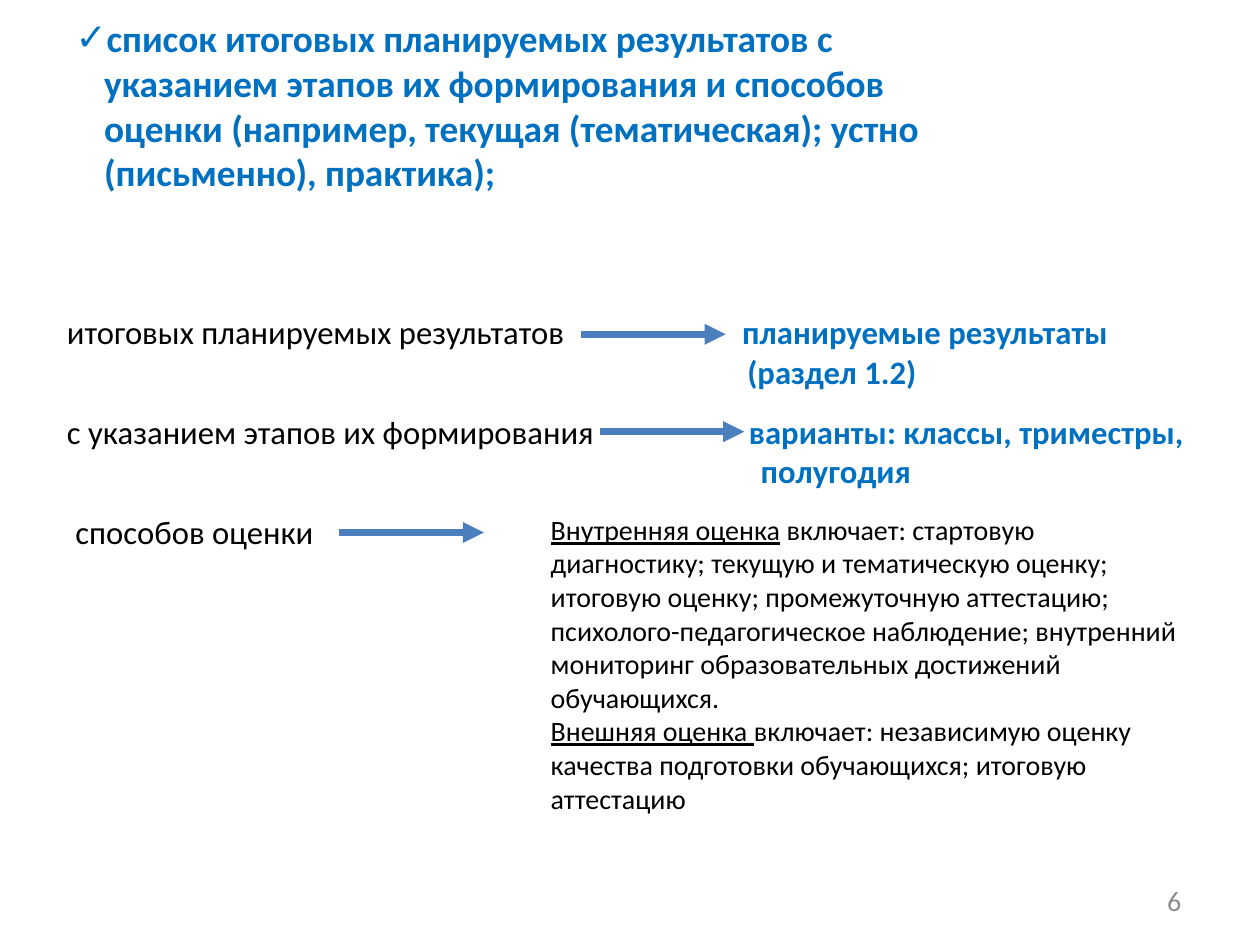
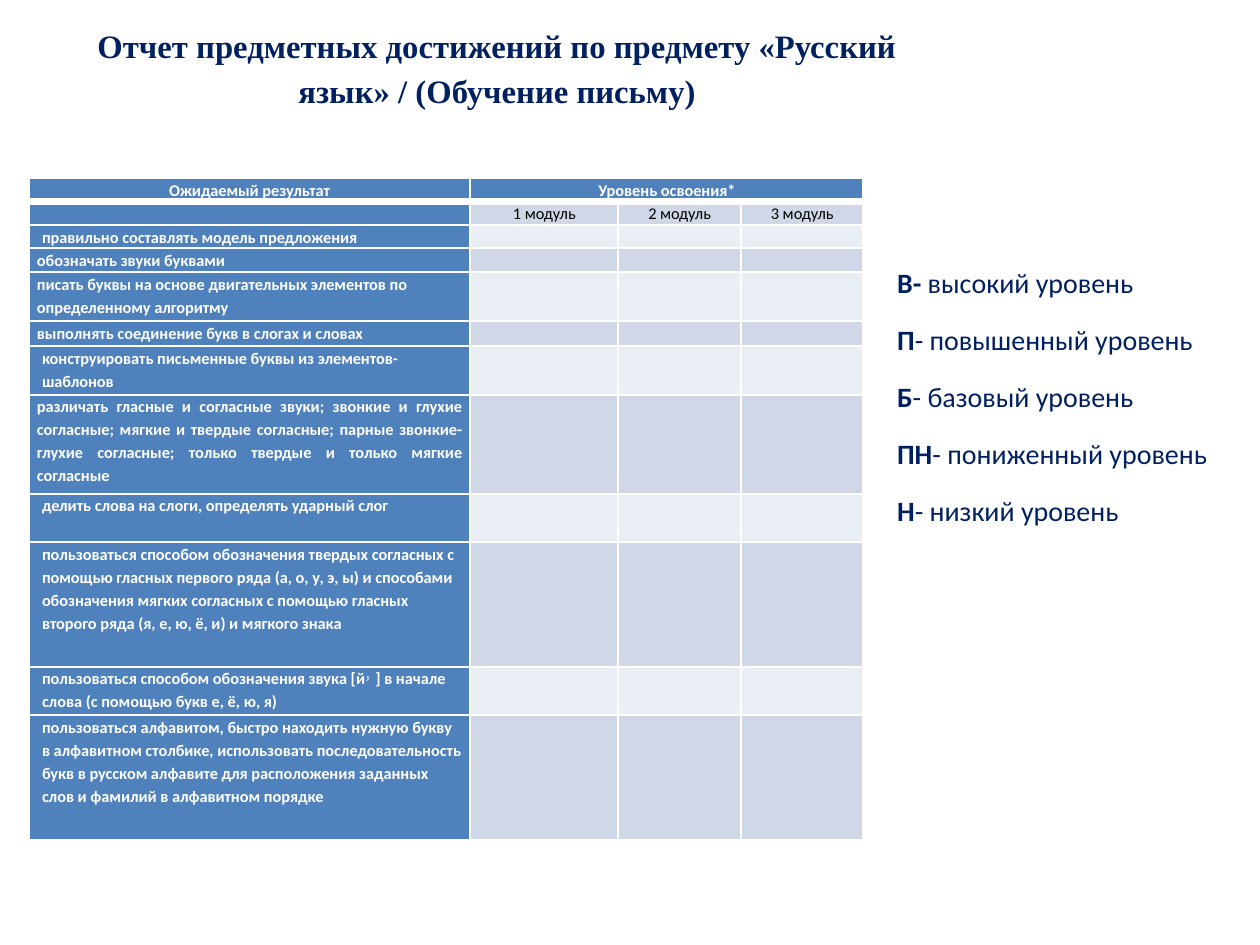
"""Build two slides on planned learning results and their assessment."""
from lxml import etree
from pptx import Presentation
from pptx import util as u
from pptx.dml.color import RGBColor
from pptx.enum import shapes, text
from pptx.oxml.ns import qn

BLUE, NAVY, BLACK, WHITE, GREY = "0070C0", "002060", "000000", "FFFFFF", "8C8C8C"
ARROW, HEADER, BAND_DARK, BAND_LIGHT = "4B7EBC", "4F81BD", "D0D8E8", "E9EDF4"
LEFT, CENTER, RIGHT, JUSTIFY = (text.PP_ALIGN.LEFT, text.PP_ALIGN.CENTER,
                                text.PP_ALIGN.RIGHT, text.PP_ALIGN.JUSTIFY)
ANSWER = {"color": BLUE, "bold": True}
UNDERLINED = {"underline": True}
BOLD = {"bold": True}
INDENTED = {"margin": 0.03}

STAGES = [
    (1.81, [["итоговых планируемых результатов\t", ("планируемые результаты", ANSWER)],
            [("\t(раздел 1.2)", ANSWER)]], [4.02, 4.05]),
    (2.4, [["с указанием этапов их формирования\t", ("варианты: классы, триместры,", ANSWER)],
           [("\tполугодия", ANSWER)]], [4.06, 4.13]),
]
ARROWS = [(3.46, 1.99), (2.02, 3.17), (3.57, 2.57)]
ASSESSMENT = [
    [("Внутренняя оценка", UNDERLINED),
     " включает: стартовую диагностику; текущую и тематическую оценку; итоговую оценку; "
     "промежуточную аттестацию; психолого-педагогическое наблюдение; внутренний мониторинг "
     "образовательных достижений обучающихся."],
    [("Внешняя оценка ", UNDERLINED),
     "включает: независимую оценку качества подготовки обучающихся; итоговую аттестацию"],
]
LEVELS = [("В-", " высокий уровень"), ("П", "- повышенный уровень"),
          ("Б", "- базовый уровень"), ("ПН", "- пониженный уровень"),
          ("Н", "- низкий уровень")]
RESULTS = [
    (0.14, "правильно составлять модель предложения", INDENTED),
    (0.14, "обозначать звуки буквами", {}),
    (0.29, "писать буквы на основе двигательных элементов по определенному алгоритму", {}),
    (0.15, "выполнять соединение букв в слогах и словах", {}),
    (0.29, "конструировать письменные буквы из элементов-шаблонов", INDENTED),
    (0.59, "различать гласные и согласные звуки; звонкие и глухие согласные; мягкие и твердые "
           "согласные; парные звонкие-глухие согласные; только твердые и только мягкие согласные ",
     {"align": JUSTIFY}),
    (0.29, "делить слова на слоги, определять ударный слог", INDENTED),
    (0.74, "пользоваться способом обозначения твердых согласных с помощью гласных первого ряда "
           "(а, о, у, э, ы) и способами обозначения мягких согласных с помощью гласных второго "
           "ряда (я, е, ю, ё, и) и мягкого знака", INDENTED),
    (0.29, "пользоваться способом обозначения звука [йۥ ] в начале слова "
           "(с помощью букв е, ё, ю, я)", INDENTED),
    (0.74, "пользоваться алфавитом, быстро находить нужную букву в алфавитном столбике, "
           "использовать последовательность букв в русском алфавите для расположения заданных "
           "слов и фамилий в алфавитном порядке", INDENTED),
]


def rgb(code):
    """Turn a hex string into a colour."""
    return RGBColor.from_string(code)


def child(parent, tag, **attributes):
    """Append a drawing element with attributes."""
    return etree.SubElement(parent, qn(tag), {k: str(v) for k, v in attributes.items()})


def write(frame, lines, size=14, font="Calibri", color=BLACK, bold=False, align=LEFT,
          spacing=1.0, after=0, margin=0, indent=0, bullet=None, tabs=()):
    """Write lines of spans; a span is a string or a (string, overrides) pair."""
    frame.word_wrap = True
    for index, line in enumerate([lines] if isinstance(lines, str) else lines):
        para = frame.paragraphs[0] if index == 0 else frame.add_paragraph()
        para.alignment, para.line_spacing = align, spacing
        para.space_before, para.space_after = u.Pt(0), u.Pt(after)
        props = para._p.get_or_add_pPr()
        if tabs:
            stops = child(props, "a:tabLst")
            child(stops, "a:tab", pos=u.Inches(tabs[index]), algn="l")
        else:
            props.set("marL", str(u.Inches(margin)))
            props.set("indent", str(u.Inches(indent)))
            if bullet:
                child(props, "a:buFont", typeface=font)
                child(props, "a:buChar", char=bullet)
            else:
                child(props, "a:buNone")
        for part in [line] if isinstance(line, str) else line:
            words, extra = (part, {}) if isinstance(part, str) else part
            span = para.add_run()
            span.text = words
            span.font.size, span.font.name = u.Pt(size), font
            span.font.bold = extra.get("bold", bold)
            span.font.underline = extra.get("underline", False)
            span.font.color.rgb = rgb(extra.get("color", color))


class Pages:
    """Hold the deck, the current page and the shared style."""

    def __init__(self):
        """Start a deck with 4:3 pages."""
        self.deck = Presentation()
        self.deck.slide_width = u.Inches(7.5)
        self.deck.slide_height = u.Inches(7.5 * 3 / 4)
        self.page = None

    def add_page(self, layout):
        """Add a page on the numbered layout."""
        self.page = self.deck.slides.add_slide(self.deck.slide_layouts[layout])

    def place(self, holder, at, lines, **style):
        """Move a placeholder and write into it."""
        holder.left, holder.top, holder.width, holder.height = map(u.Inches, at)
        holder.text_frame.auto_size = text.MSO_AUTO_SIZE.NONE
        holder.text_frame.vertical_anchor = text.MSO_ANCHOR.TOP
        write(holder.text_frame, lines, **style)

    def title(self, at, words, **style):
        """Write the bold title of the page."""
        self.place(self.page.shapes.title, at, words, bold=True, **style)

    def body(self, at, lines, **style):
        """Write the list of the page."""
        self.place(self.page.placeholders[1], at, lines, **style)

    def label(self, at, lines, anchor=text.MSO_ANCHOR.TOP, **style):
        """Add a text box."""
        box = self.page.shapes.add_textbox(*map(u.Inches, at))
        box.text_frame.vertical_anchor = anchor
        write(box.text_frame, lines, **style)

    def arrow(self, left, top, length=0.86):
        """Add a horizontal arrow pointing right."""
        line = self.page.shapes.add_connector(
            shapes.MSO_CONNECTOR.STRAIGHT, u.Inches(left), u.Inches(top),
            u.Inches(left + length), u.Inches(top))
        line.line.color.rgb, line.line.width = rgb(ARROW), u.Pt(3)
        child(line.line._get_or_add_ln(), "a:tailEnd", type="triangle")
        child(line._element.spPr, "a:effectLst")

    def cell(self, cell, fill, words="", bottom=1, **style):
        """Format one table cell with white borders."""
        cell.margin_left = cell.margin_right = u.Inches(0.05)
        cell.margin_top = cell.margin_bottom = 0
        props = cell._tc.get_or_add_tcPr()
        for side, width in zip("LRTB", (1, 1, 1, bottom)):
            edge = child(props, f"a:ln{side}", w=u.Pt(width))
            child(child(edge, "a:solidFill"), "a:srgbClr", val=WHITE)
        cell.fill.solid()
        cell.fill.fore_color.rgb = rgb(fill)
        if words:
            write(cell.text_frame, words, size=7, spacing=1.15, after=10, **style)
        else:
            child(cell.text_frame.paragraphs[0]._p, "a:endParaRPr", sz=700)

    def results_table(self, left, top, widths):
        """Add the table of expected results by module."""
        heights = [0.14, 0.14] + [height for height, _, _ in RESULTS]
        table = self.page.shapes.add_table(
            len(heights), len(widths), u.Inches(left), u.Inches(top),
            u.Inches(sum(widths)), u.Inches(sum(heights))).table
        for column, width in zip(table.columns, widths):
            column.width = u.Inches(width)
        for row, height in zip(table.rows, heights):
            row.height = u.Inches(height)
        heading = {"color": WHITE, "bold": True, "align": CENTER, "bottom": 3}
        for column, words in enumerate(["Ожидаемый результат", "Уровень освоения*", "", ""]):
            self.cell(table.cell(0, column), HEADER, words, **heading)
        table.cell(0, 1).merge(table.cell(0, 3))
        self.cell(table.cell(1, 0), HEADER)
        for module in (1, 2, 3):
            self.cell(table.cell(1, module), BAND_DARK, f"{module} модуль", align=CENTER)
        for row, (_, words, style) in enumerate(RESULTS, 2):
            self.cell(table.cell(row, 0), HEADER, words, color=WHITE, bold=True, **style)
            for module in (1, 2, 3):
                self.cell(table.cell(row, module), BAND_DARK if row % 2 else BAND_LIGHT)


def main():
    """Build both pages and save the deck."""
    pages = Pages()

    pages.add_page(5)
    pages.title((0.35, 0.04, 5.59, 1.18),
                "список итоговых планируемых результатов с указанием этапов их формирования и "
                "способов оценки (например, текущая (тематическая); устно (письменно), практика);",
                size=16, color=BLUE, margin=0.17, indent=-0.17, bullet="✓")
    for top, lines, tabs in STAGES:
        pages.label((0.3, top, 7.03, 0.57), lines, tabs=tabs)
    pages.label((0.35, 3, 2.43, 0.34), "способов оценки")
    for left, top in ARROWS:
        pages.arrow(left, top)
    pages.label((3.18, 3, 4.03, 1.92), ASSESSMENT, size=12)
    pages.label((5.38, 5.21, 1.75, 0.3), "6", anchor=text.MSO_ANCHOR.MIDDLE,
                size=12, color=GREY, align=RIGHT)

    pages.add_page(1)
    pages.results_table(0.17, 1.06, [2.63, 0.88, 0.73, 0.73])
    pages.title((0.3, 0.07, 5.32, 0.63),
                "Отчет предметных достижений по предмету «Русский язык» / (Обучение письму)",
                font="Times New Roman", color=NAVY, align=CENTER, spacing=1.15, after=10)
    pages.body((5.24, 1.53, 2.26, 1.67), [[(mark, BOLD), level] for mark, level in LEVELS],
               size=12, color=NAVY, align=JUSTIFY, after=10)

    pages.deck.save("out.pptx")


if __name__ == "__main__":
    main()
